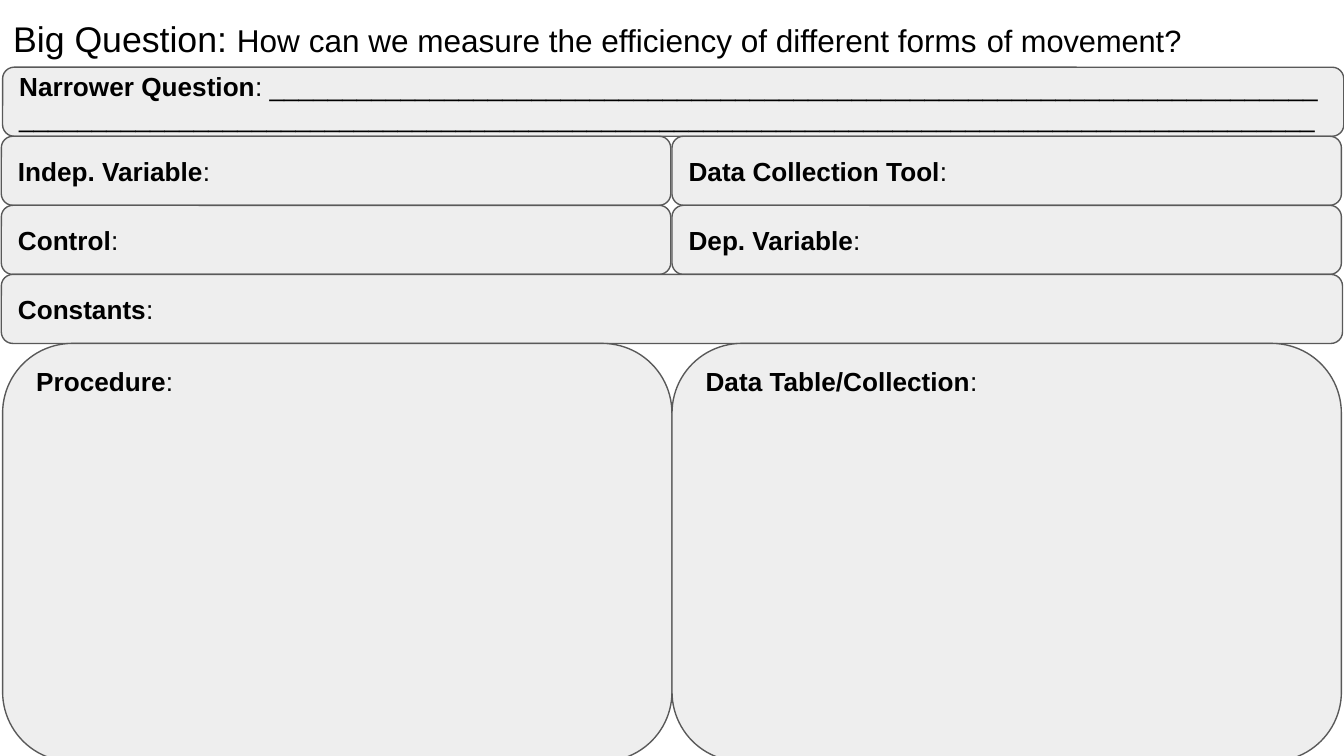
from dataclasses import dataclass

from pptx import Presentation
from pptx.dml.color import RGBColor
from pptx.enum.shapes import MSO_SHAPE
from pptx.enum.text import MSO_ANCHOR, PP_ALIGN
from pptx.util import Pt


@dataclass(frozen=True)
class Theme:
    """Colours, font and type sizes of the worksheet."""
    font: str = "Arial"
    ink: RGBColor = RGBColor(0x00, 0x00, 0x00)
    panel: RGBColor = RGBColor(0xEE, 0xEE, 0xEE)
    outline: RGBColor = RGBColor(0x59, 0x59, 0x59)
    label_size: float = 14
    heading_size: float = 19.1
    question_size: float = 16.9
    ending_size: float = 16.5


THEME = Theme()
LEFT, MIDDLE = 0.7, 360
HALF, FULL = 358.6, 718.5
FIRST_ROW, ROW = 36, 37
PANEL_HEIGHT = 224


def set_margins(frame, top):
    """Wrap the text and inset it evenly apart from the top."""
    frame.word_wrap = True
    frame.margin_left = frame.margin_right = frame.margin_bottom = Pt(7.2)
    frame.margin_top = Pt(top)


def style_paragraph(paragraph):
    """Apply the shared font to a left-aligned paragraph."""
    paragraph.alignment = PP_ALIGN.LEFT
    paragraph.font.name = THEME.font
    paragraph.font.color.rgb = THEME.ink


def add_heading(slide, parts):
    """Add the big question from pairs of wording and size."""
    heading = slide.shapes.add_textbox(0, 0, Pt(FULL), Pt(45))
    set_margins(heading.text_frame, top=9)
    question = heading.text_frame.paragraphs[0]
    style_paragraph(question)
    for wording, size in parts:
        run = question.add_run()
        run.text = wording
        run.font.size = Pt(size)


def add_field(slide, label, left, row, width, height=ROW,
              anchor=MSO_ANCHOR.MIDDLE, top_margin=7.2, blanks=()):
    """Add a rounded field with a bold label and optional writing lines."""
    field = slide.shapes.add_shape(
        MSO_SHAPE.ROUNDED_RECTANGLE,
        Pt(left), Pt(FIRST_ROW + row * ROW), Pt(width), Pt(height))
    field.shadow.inherit = False
    field.fill.solid()
    field.fill.fore_color.rgb = THEME.panel
    field.line.color.rgb = THEME.outline
    field.line.width = Pt(0.75)
    frame = field.text_frame
    set_margins(frame, top_margin)
    frame.vertical_anchor = anchor

    first_blank, *more_blanks = blanks or (0,)
    prompt = frame.paragraphs[0]
    name = prompt.add_run()
    name.text = label
    name.font.bold = True
    prompt.add_run().text = ": " + "_" * first_blank if first_blank else ":"
    for length in more_blanks:
        frame.add_paragraph().text = "_" * length
    for paragraph in frame.paragraphs:
        style_paragraph(paragraph)
        paragraph.font.size = Pt(THEME.label_size)


def add_panel(slide, label, left):
    """Add a tall writing panel with its label at the top."""
    add_field(slide, label, left, 4, HALF, PANEL_HEIGHT,
              anchor=MSO_ANCHOR.TOP, top_margin=1)


def main():
    """Build the experiment planning worksheet."""
    deck = Presentation()
    deck.slide_width, deck.slide_height = Pt(720), Pt(405)
    slide = deck.slides.add_slide(deck.slide_layouts[6])

    add_heading(slide, [
        ("Big Question: ", THEME.heading_size),
        ("How can we measure the efficiency of different forms",
         THEME.question_size),
        (" of movement?", THEME.ending_size),
    ])
    add_field(slide, "Narrower Question", 1.4, 0, FULL, blanks=(72, 89))
    for row, (cause, effect) in enumerate([
        ("Indep. Variable", "Data Collection Tool"),
        ("Control", "Dep. Variable"),
    ], start=1):
        add_field(slide, cause, LEFT, row, HALF)
        add_field(slide, effect, MIDDLE, row, HALF)
    add_field(slide, "Constants", LEFT, 3, FULL)
    add_panel(slide, "Procedure", 1.4)
    add_panel(slide, "Data Table/Collection", MIDDLE)

    deck.save("out.pptx")


if __name__ == "__main__":
    main()
